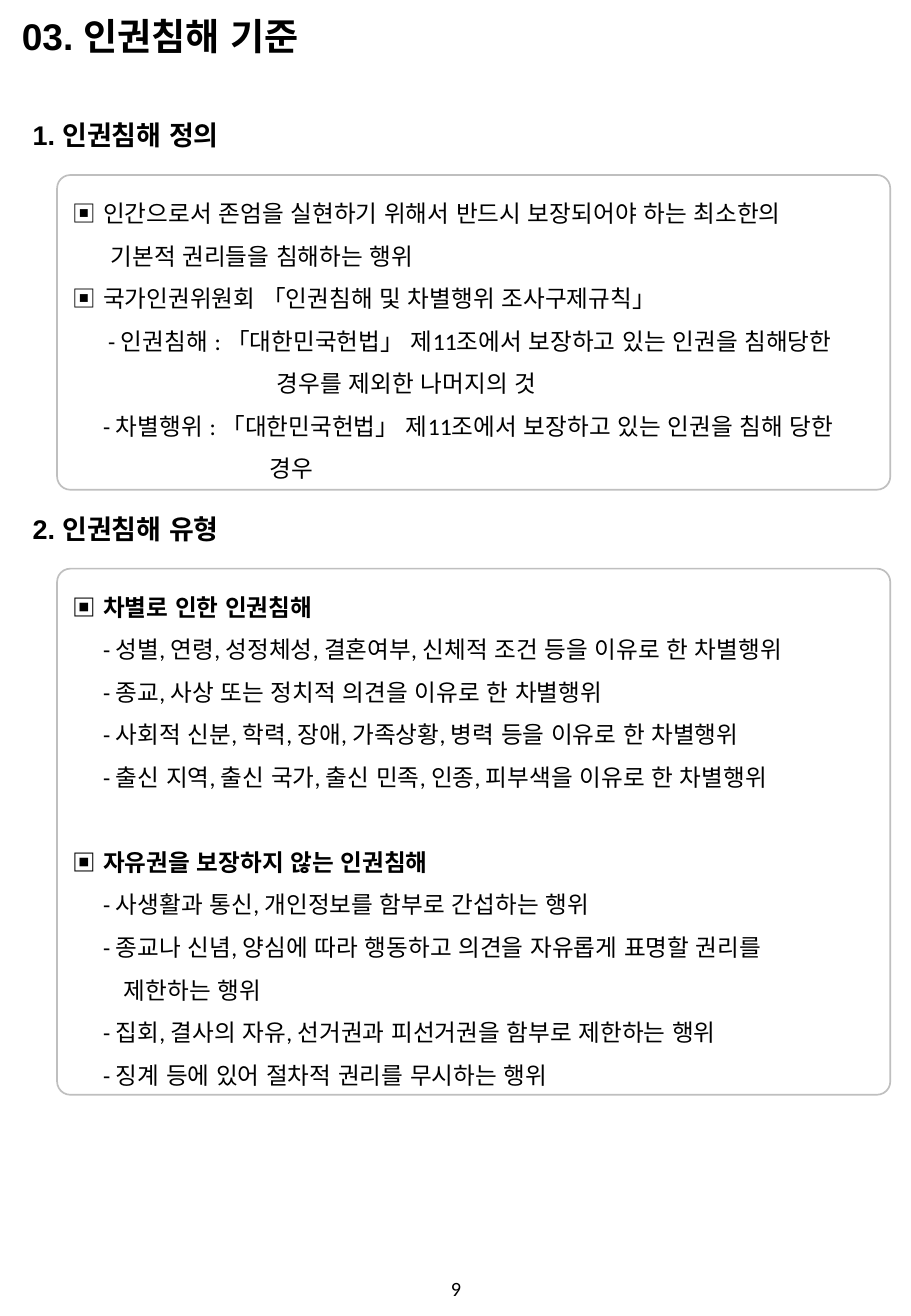
from dataclasses import dataclass

from pptx import Presentation
from pptx.dml.color import RGBColor
from pptx.enum.lang import MSO_LANGUAGE_ID
from pptx.enum.shapes import MSO_SHAPE
from pptx.enum.text import MSO_ANCHOR, MSO_AUTO_SIZE, PP_ALIGN
from pptx.util import Inches, Pt

ROUNDED = MSO_SHAPE.ROUNDED_RECTANGLE
TOP, MIDDLE = MSO_ANCHOR.TOP, MSO_ANCHOR.MIDDLE
LEFT, CENTER = PP_ALIGN.LEFT, PP_ALIGN.CENTER
FIT = MSO_AUTO_SIZE.SHAPE_TO_FIT_TEXT
KOREAN = MSO_LANGUAGE_ID.KOREAN
TITLE_ONLY = 5


@dataclass(frozen=True)
class Theme:
    """Colours, fonts and type sizes of the handbook page."""
    ink: RGBColor = RGBColor(0, 0, 0)
    border: RGBColor = RGBColor(0xBF, 0xBF, 0xBF)
    heading_font: str = "Arial"
    body_font: str = "Calibri"
    title_size: int = 22
    heading_size: int = 16
    body_size: int = 14
    number_size: int = 12
    leading: float = 1.5
    gap: float = 25.2
    radius: float = 0.11


DASH = 0.25
DEFINITION = [
    ("▣ 인간으로서 존엄을 실현하기 위해서 반드시 보장되어야 하는 최소한의", 0),
    ("기본적 권리들을 침해하는 행위", 0.31),
    ("▣ 국가인권위원회 「인권침해 및 차별행위 조사구제규칙」", 0),
    ("- 인권침해 : 「대한민국헌법」 제11조에서 보장하고 있는 인권을 침해당한", 0.29),
    ("경우를 제외한 나머지의 것", 1.68),
    ("- 차별행위 : 「대한민국헌법」 제11조에서 보장하고 있는 인권을 침해 당한", DASH),
    ("경우", 1.62),
]
TYPES = [
    ("▣ 차별로 인한 인권침해", 0, True),
    ("- 성별, 연령, 성정체성, 결혼여부, 신체적 조건 등을 이유로 한 차별행위", DASH),
    ("- 종교, 사상 또는 정치적 의견을 이유로 한 차별행위", DASH),
    ("- 사회적 신분, 학력, 장애, 가족상황, 병력 등을 이유로 한 차별행위", DASH),
    ("- 출신 지역, 출신 국가, 출신 민족, 인종, 피부색을 이유로 한 차별행위", DASH),
    ("▣ 자유권을 보장하지 않는 인권침해", 0, True),
    ("- 사생활과 통신, 개인정보를 함부로 간섭하는 행위", DASH),
    ("- 종교나 신념, 양심에 따라 행동하고 의견을 자유롭게 표명할 권리를", DASH),
    ("제한하는 행위", 0.42),
    ("- 집회, 결사의 자유, 선거권과 피선거권을 함부로 제한하는 행위", DASH),
    ("- 징계 등에 있어 절차적 권리를 무시하는 행위", DASH),
]


def apply(target, **values):
    """Set each named attribute on the target."""
    for name, value in values.items():
        setattr(target, name, value)


class Page:
    """Draws the elements of one slide in a shared style."""

    def __init__(self, s, theme):
        """Keep the slide and its theme."""
        self.s, self.theme = s, theme

    def add_text(self, p, text, font, size, bold=False):
        """Add one formatted run to a paragraph."""
        r = p.add_run()
        r.text = text
        apply(r.font, name=font, size=Pt(size), bold=bold, language_id=KOREAN)
        r.font.color.rgb = self.theme.ink

    def label(self, sp, text, size):
        """Fill a shape with a one-line bold heading."""
        tf = sp.text_frame
        apply(tf, word_wrap=False, auto_size=FIT, vertical_anchor=TOP)
        p = tf.paragraphs[0]
        p.alignment = LEFT
        self.add_text(p, text, self.theme.heading_font, size, True)

    def title(self, text, x, y, w, h):
        """Place and format the title placeholder."""
        sp = self.s.shapes.title
        apply(sp, left=Inches(x), top=Inches(y), width=Inches(w), height=Inches(h))
        self.label(sp, text, self.theme.title_size)

    def text_box(self, x, y, w, h):
        """Add an empty text box."""
        return self.s.shapes.add_textbox(Inches(x), Inches(y), Inches(w), Inches(h))

    def heading(self, text, y):
        """Add a section heading."""
        self.label(self.text_box(0.17, y, 1.9, 0.37), text, self.theme.heading_size)

    def panel(self, lines, y, h):
        """Add a rounded panel holding indented lines."""
        t = self.theme
        sp = self.s.shapes.add_shape(ROUNDED, Inches(0.47), Inches(y), Inches(6.86), Inches(h))
        sp.adjustments[0] = t.radius / h
        sp.shadow.inherit = False
        sp.fill.background()
        sp.line.color.rgb = t.border
        sp.line.width = Pt(1)
        tf = sp.text_frame
        apply(tf, word_wrap=True, vertical_anchor=TOP)
        for i, (text, indent, *bold) in enumerate(lines):
            p = tf.add_paragraph() if i else tf.paragraphs[0]
            apply(p, alignment=LEFT, line_spacing=t.leading)
            if i and bold:
                p.space_before = Pt(t.gap)
            if indent:
                p._p.get_or_add_pPr().set("marL", str(Inches(indent)))
            self.add_text(p, text, t.body_font, t.body_size, bool(bold))

    def page_number(self, text):
        """Add the centred page number."""
        tf = self.text_box(2.91, 10.48, 1.69, 0.24).text_frame
        apply(tf, word_wrap=True, vertical_anchor=MIDDLE)
        p = tf.paragraphs[0]
        p.alignment = CENTER
        self.add_text(p, text, self.theme.body_font, self.theme.number_size)


def main():
    """Build and save the page."""
    prs = Presentation()
    apply(prs, slide_width=Inches(7.5), slide_height=Inches(10.83))
    page = Page(prs.slides.add_slide(prs.slide_layouts[TITLE_ONLY]), Theme())
    page.title("03. 인권침해 기준", 0.08, 0.06, 2.71, 0.47)
    page.heading("1. 인권침해 정의", 0.93)
    page.panel(DEFINITION, 1.44, 2.59)
    page.heading("2. 인권침해 유형", 4.17)
    page.panel(TYPES, 4.68, 4.33)
    page.page_number("9")
    prs.save("out.pptx")


if __name__ == "__main__":
    main()
